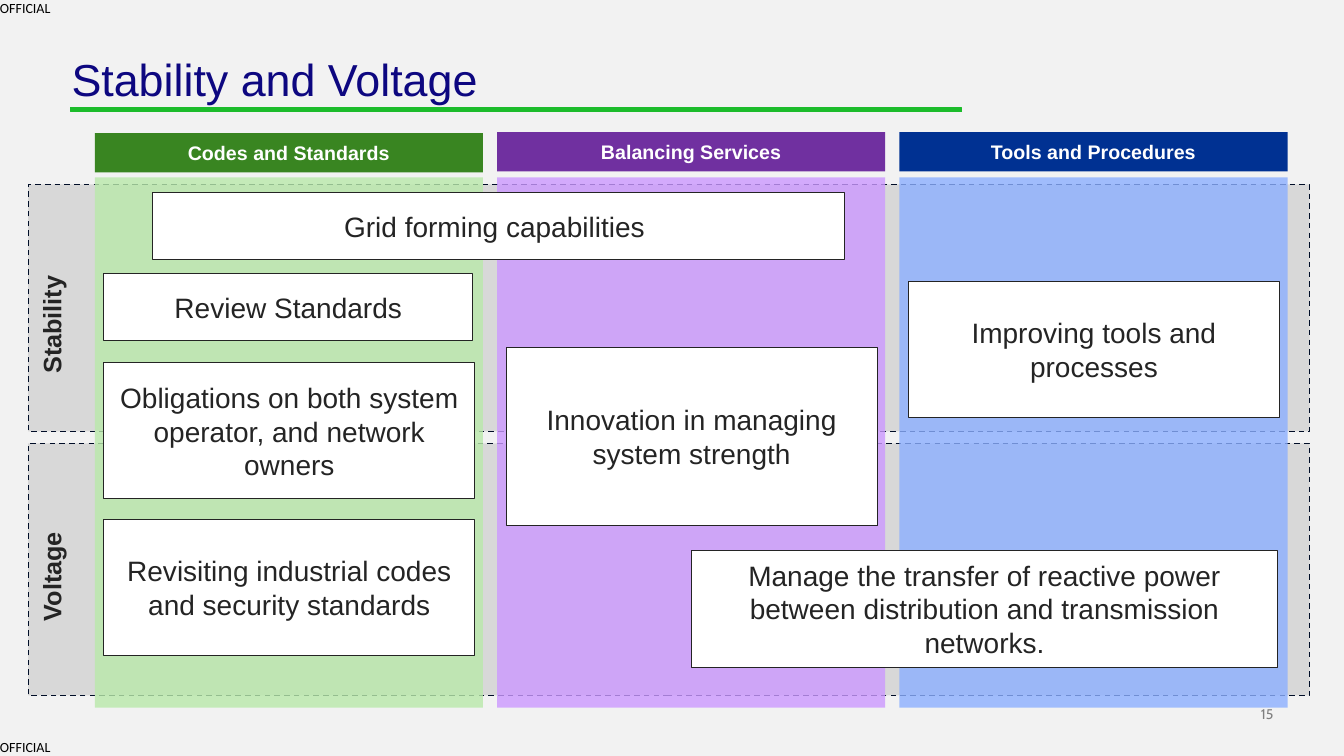
from lxml import etree
from pptx import Presentation
from pptx.dml.color import RGBColor
from pptx.enum import dml, shapes, text
from pptx.oxml import ns
from pptx.util import Inches, Pt

COLORS = {
    "background": "F2F2F2", "title": "0D0780", "rule": "1CBC2B",
    "band": "D8D8D8", "band_edge": "000D27", "ink": "242424",
    "white": "FFFFFF", "marking": "000000", "page": "7F7F7F",
    "codes": "398521", "codes_tint": "B9E9AA",
    "balancing": "7030A0", "balancing_tint": "CC99FF",
    "tools": "003192", "tools_tint": "8CAFFF",
}
BANDS = [("Voltage", 4.4, 2.5, 5.72), ("Stability", 1.83, 2.45, 3.22)]
PILLARS = [
    ("Codes and Standards", "codes", 1.32),
    ("Balancing Services", "balancing", 1.31),
    ("Tools and Procedures", "tools", 1.31),
]
ACTIONS = [
    ("Grid forming capabilities ", (1.51, 1.91, 6.87, 0.67)),
    ("Innovation in managing system strength", (5.02, 3.45, 3.68, 1.76)),
    ("Review Standards", (1.03, 2.71, 3.66, 0.67)),
    ("Improving tools and processes", (9.01, 2.79, 3.68, 1.35)),
    ("Revisiting industrial codes and security standards",
     (1.03, 5.15, 3.68, 1.35)),
    ("Manage the transfer of reactive power between distribution and "
     "transmission networks.", (6.86, 5.46, 5.81, 1.16)),
    ("Obligations on both system operator, and network owners",
     (1.03, 3.6, 3.68, 1.35)),
]


def rgb(name):
    """Return the named colour."""
    return RGBColor.from_string(COLORS[name])


def write(shape, words, size, color, font="Arial", bold=False,
          align=text.PP_ALIGN.CENTER, anchor=text.MSO_ANCHOR.MIDDLE):
    """Put one formatted paragraph into a shape."""
    frame = shape.text_frame
    frame.word_wrap = True
    frame.vertical_anchor = anchor
    frame.text = words
    paragraph = frame.paragraphs[0]
    paragraph.alignment = align
    paragraph.font.name = font
    paragraph.font.size = Pt(size)
    paragraph.font.bold = bold
    paragraph.font.color.rgb = rgb(color)


def clear_margins(shape):
    """Remove the inner margins of a text shape."""
    frame = shape.text_frame
    frame.margin_left = frame.margin_right = 0
    frame.margin_top = frame.margin_bottom = 0


def add_panel(slide, box, fill, edge=None, width=0.75, alpha=None):
    """Add a flat rectangle, with an optional edge and opacity in percent."""
    panel = slide.shapes.add_shape(shapes.MSO_SHAPE.RECTANGLE, *map(Inches, box))
    panel.shadow.inherit = False
    panel.fill.solid()
    panel.fill.fore_color.rgb = rgb(fill)
    if alpha:
        tint = panel.fill._xPr.find(".//" + ns.qn("a:srgbClr"))
        etree.SubElement(tint, ns.qn("a:alpha"), val=str(alpha * 1000))
    if edge:
        panel.line.color.rgb = rgb(edge)
        panel.line.width = Pt(width)
    else:
        panel.line.fill.background()
    return panel


def add_heading(slide, box):
    """Place the title and the green rule below it."""
    left, top, width, height = box
    title = slide.shapes.title
    title.left, title.top, title.width, title.height = map(Inches, box)
    clear_margins(title)
    write(title, "Stability and Voltage", 32, "title",
          align=text.PP_ALIGN.LEFT, anchor=text.MSO_ANCHOR.TOP)
    title.text_frame.paragraphs[0].line_spacing = 0.9
    add_panel(slide, (left - 0.01, top + height + 0.02, width - 0.02, 0.04),
              "rule", "rule")


def add_margin_note(slide, box, words, color, font, align, anchor):
    """Add a small note at the slide's margin."""
    note = slide.shapes.add_textbox(*map(Inches, box))
    clear_margins(note)
    write(note, words, 10, color, font, align=align, anchor=anchor)


def add_band(slide, box, name, label_center):
    """Add a dashed band with its name turned upwards at the left."""
    band = add_panel(slide, box, "band", "band_edge", 1)
    band.line.dash_style = dml.MSO_LINE.DASH
    width, height = 2, 0.73
    label_box = (box[0] + 0.23 - width / 2, label_center - height / 2,
                 width, height)
    label = slide.shapes.add_textbox(*map(Inches, label_box))
    label.rotation = 270
    write(label, name, 18, "ink", bold=True)


def add_pillar(slide, box, name, color):
    """Add a pillar's header and its translucent column."""
    left, top, width, bottom = box
    header = add_panel(slide, (left, top, width, 0.39), color)
    write(header, name, 14, "white", bold=True)
    add_panel(slide, (left, 1.76, width, bottom - 1.76), color + "_tint",
              alpha=80)


def add_action(slide, box, words):
    """Add a white action box."""
    write(add_panel(slide, box, "white", "ink"), words, 20, "ink")


def main():
    """Build the slide and save it."""
    deck = Presentation()
    deck.slide_width, deck.slide_height = Inches(13.33), Inches(7.5)
    slide = deck.slides.add_slide(deck.slide_layouts[5])
    slide.background.fill.solid()
    slide.background.fill.fore_color.rgb = rgb("background")

    add_margin_note(slide, (12.21, 7, 0.42, 0.17), "15", "page", "Cabin",
                    text.PP_ALIGN.RIGHT, text.MSO_ANCHOR.BOTTOM)
    for top in (7.33, 0):
        add_margin_note(slide, (0, top, 0.53, 0.17), "OFFICIAL", "marking",
                        "Calibri", text.PP_ALIGN.LEFT, text.MSO_ANCHOR.TOP)
    add_heading(slide, (0.71, 0.57, 8.86, 0.48))
    for name, top, height, label_center in BANDS:
        add_band(slide, (0.28, top, 12.71, height), name, label_center)
    for index, (name, color, top) in enumerate(PILLARS):
        add_pillar(slide, (0.94 + 3.99 * index, top, 3.85, 7.02), name, color)
    for words, box in ACTIONS:
        add_action(slide, box, words)
    deck.save("out.pptx")


if __name__ == "__main__":
    main()
